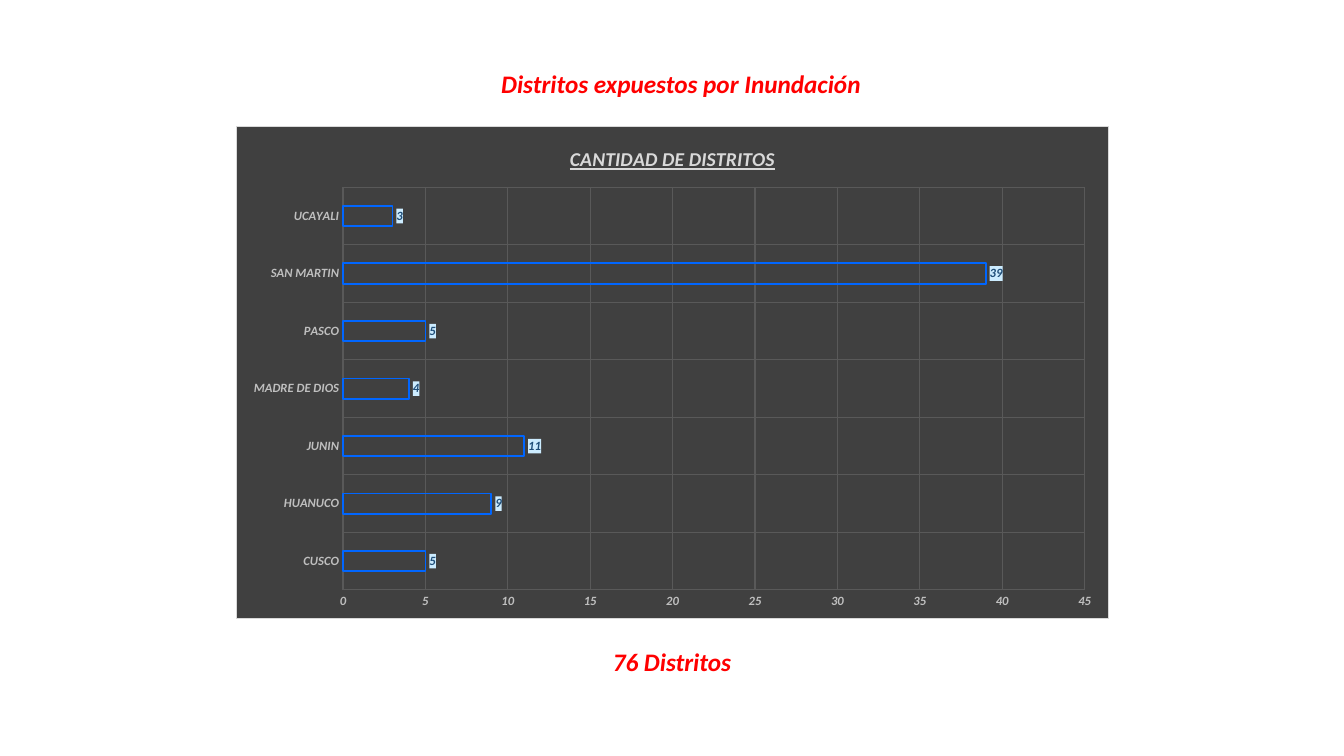
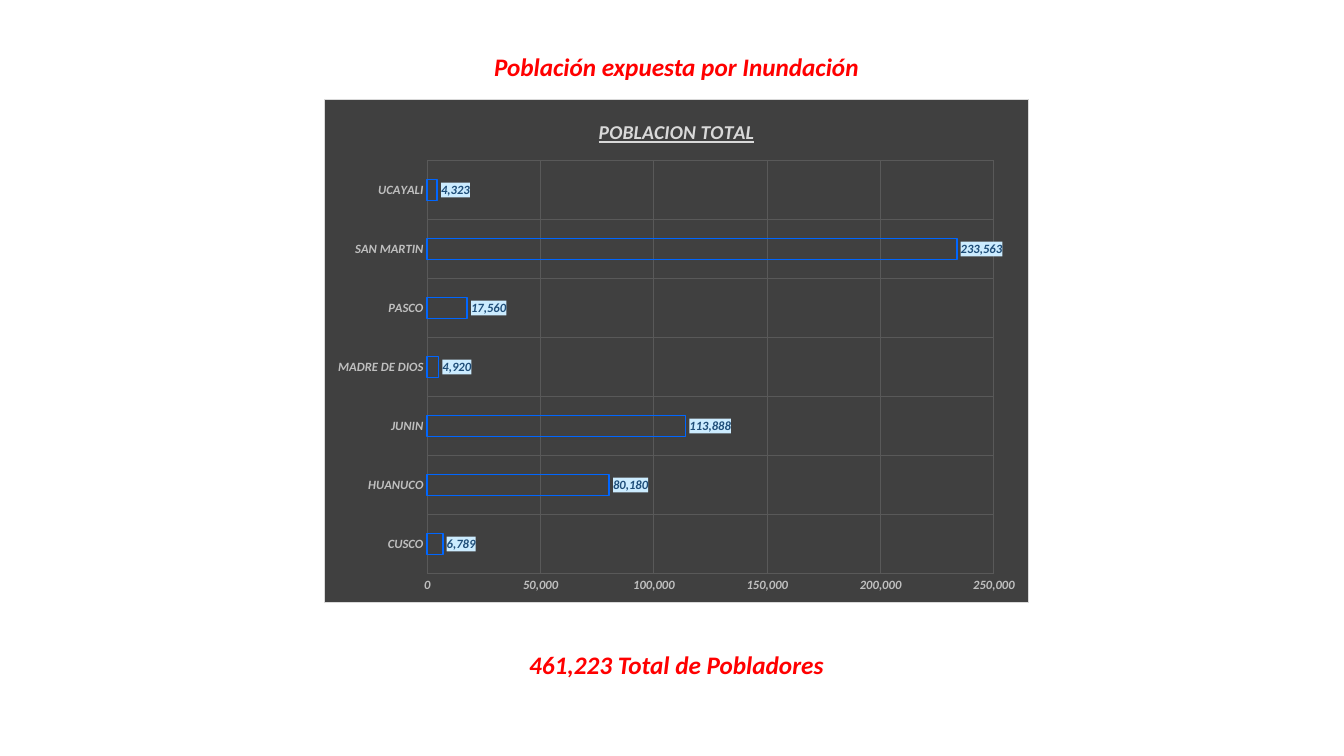
import dataclasses

import lxml.etree
import pptx
import pptx.chart.data
import pptx.dml.color
import pptx.enum.chart
import pptx.enum.text
import pptx.oxml
import pptx.oxml.ns
import pptx.util

PX = 9144  # 100 px to the inch


@dataclasses.dataclass(frozen=True)
class Theme:
    font: str = "Calibri"
    heading: str = "FF0000"
    panel: str = "404040"
    panel_border: str = "D9D9D9"
    grid: str = "595959"
    axis_text: str = "BFBFBF"
    bar: str = "0066FF"
    label_text: str = "1F4E79"
    label_fill: str = "CCECFF"
    heading_size: int = 18
    chart_title_size: int = 14
    chart_text_size: int = 9
    hairline: float = 0.75
    bar_line: float = 1.25


THEME = Theme()

DEPARTMENTS = ["CUSCO", "HUANUCO", "JUNIN", "MADRE DE DIOS", "PASCO", "SAN MARTIN", "UCAYALI"]

# Boxes are left, top, width, height in px.
SLIDES = [
    {
        "heading": ("Distritos expuestos por Inundación", (485, 63, 381, 40)),
        "total": ("76 Distritos", (591, 636, 151, 40)),
        "chart_title": "CANTIDAD DE DISTRITOS",
        "chart_box": (234, 125, 866, 489),
        "values": [5, 9, 11, 4, 5, 39, 3],
    },
    {
        "heading": ("Población expuesta por Inundación", (478, 46, 386, 40)),
        "total": ("461,223 Total de Pobladores", (503, 639, 336, 40)),
        "chart_title": "POBLACION TOTAL",
        "chart_box": (321, 98, 700, 500),
        "values": [6789, 80180, 113888, 4920, 17560, 233563, 4323],
    },
]


def rgb(color):
    return pptx.dml.color.RGBColor.from_string(color)


def to_emu(box):
    return [pptx.util.Emu(px * PX) for px in box]


def style_font(font, size, color):
    font.name = THEME.font
    font.size = pptx.util.Pt(size)
    font.bold = font.italic = True
    font.color.rgb = rgb(color)


def style_line(line, color, width):
    line.color.rgb = rgb(color)
    line.width = pptx.util.Pt(width)


def area_format(fill, border=None):
    """Build the c:spPr element that python-pptx does not offer for chart areas and labels."""
    outline = ""
    if border:
        outline = (
            f'<a:ln w="{pptx.util.Pt(THEME.hairline)}"><a:solidFill>'
            f'<a:srgbClr val="{border}"/></a:solidFill></a:ln>'
        )
    return pptx.oxml.parse_xml(
        f'<c:spPr {pptx.oxml.ns.nsdecls("c", "a")}><a:solidFill>'
        f'<a:srgbClr val="{fill}"/></a:solidFill>{outline}</c:spPr>'
    )


def write_heading(shape, text, box, wrap):
    shape.left, shape.top, shape.width, shape.height = to_emu(box)
    frame = shape.text_frame
    frame.word_wrap = wrap
    frame.auto_size = pptx.enum.text.MSO_AUTO_SIZE.SHAPE_TO_FIT_TEXT
    frame.vertical_anchor = pptx.enum.text.MSO_ANCHOR.TOP
    paragraph = frame.paragraphs[0]
    paragraph.alignment = pptx.enum.text.PP_ALIGN.CENTER
    run = paragraph.add_run()
    run.text = text
    style_font(run.font, THEME.heading_size, THEME.heading)


def style_axis(axis):
    axis.major_tick_mark = axis.minor_tick_mark = pptx.enum.chart.XL_TICK_MARK.NONE
    axis.format.line.fill.background()
    axis.has_major_gridlines = True
    style_line(axis.major_gridlines.format.line, THEME.grid, THEME.hairline)
    style_font(axis.tick_labels.font, THEME.chart_text_size, THEME.axis_text)


def style_bars(plot):
    plot.gap_width = 182
    plot.overlap = -50
    plot.vary_by_categories = False
    bars = plot.series[0]
    bars.invert_if_negative = False
    bars.format.fill.background()
    style_line(bars.format.line, THEME.bar, THEME.bar_line)

    labels = bars.data_labels
    labels.show_value = True
    labels.position = pptx.enum.chart.XL_LABEL_POSITION.OUTSIDE_END
    labels.number_format = "#,##0"
    labels.number_format_is_linked = False
    style_font(labels.font, THEME.chart_text_size, THEME.label_text)
    text_format = labels._element.find(pptx.oxml.ns.qn("c:txPr"))
    text_format.addprevious(area_format(THEME.label_fill))


def add_bar_chart(slide, title, values, box):
    data = pptx.chart.data.CategoryChartData(number_format="#,##0")
    data.categories = DEPARTMENTS
    data.add_series(title, values)
    chart = slide.shapes.add_chart(
        pptx.enum.chart.XL_CHART_TYPE.BAR_CLUSTERED, *to_emu(box), data
    ).chart
    chart.font.name = THEME.font
    chart.font.size = pptx.util.Pt(THEME.chart_text_size)
    chart.has_legend = False
    chart.has_title = True
    chart.chart_title.include_in_layout = False
    run = chart.chart_title.text_frame.paragraphs[0].add_run()
    run.text = title
    style_font(run.font, THEME.chart_title_size, THEME.panel_border)
    run.font.underline = True

    for axis in (chart.category_axis, chart.value_axis):
        style_axis(axis)
    chart.value_axis.tick_labels.number_format = "#,##0"
    chart.value_axis.tick_labels.number_format_is_linked = False
    style_bars(chart.plots[0])
    chart_body = chart._chartSpace.find(pptx.oxml.ns.qn("c:chart"))
    chart_body.addnext(area_format(THEME.panel, THEME.panel_border))


def add_summary_slide(deck, content):
    slide = deck.slides.add_slide(deck.slide_layouts.get_by_name("Title Only"))
    write_heading(slide.shapes.title, *content["heading"], wrap=False)
    text, box = content["total"]
    write_heading(slide.shapes.add_textbox(*to_emu(box)), text, box, wrap=True)
    add_bar_chart(slide, content["chart_title"], content["values"], content["chart_box"])


def main():
    deck = pptx.Presentation()
    deck.slide_width, deck.slide_height = to_emu((1333, 750))
    for content in SLIDES:
        add_summary_slide(deck, content)
    deck.save("out.pptx")


if __name__ == "__main__":
    main()
